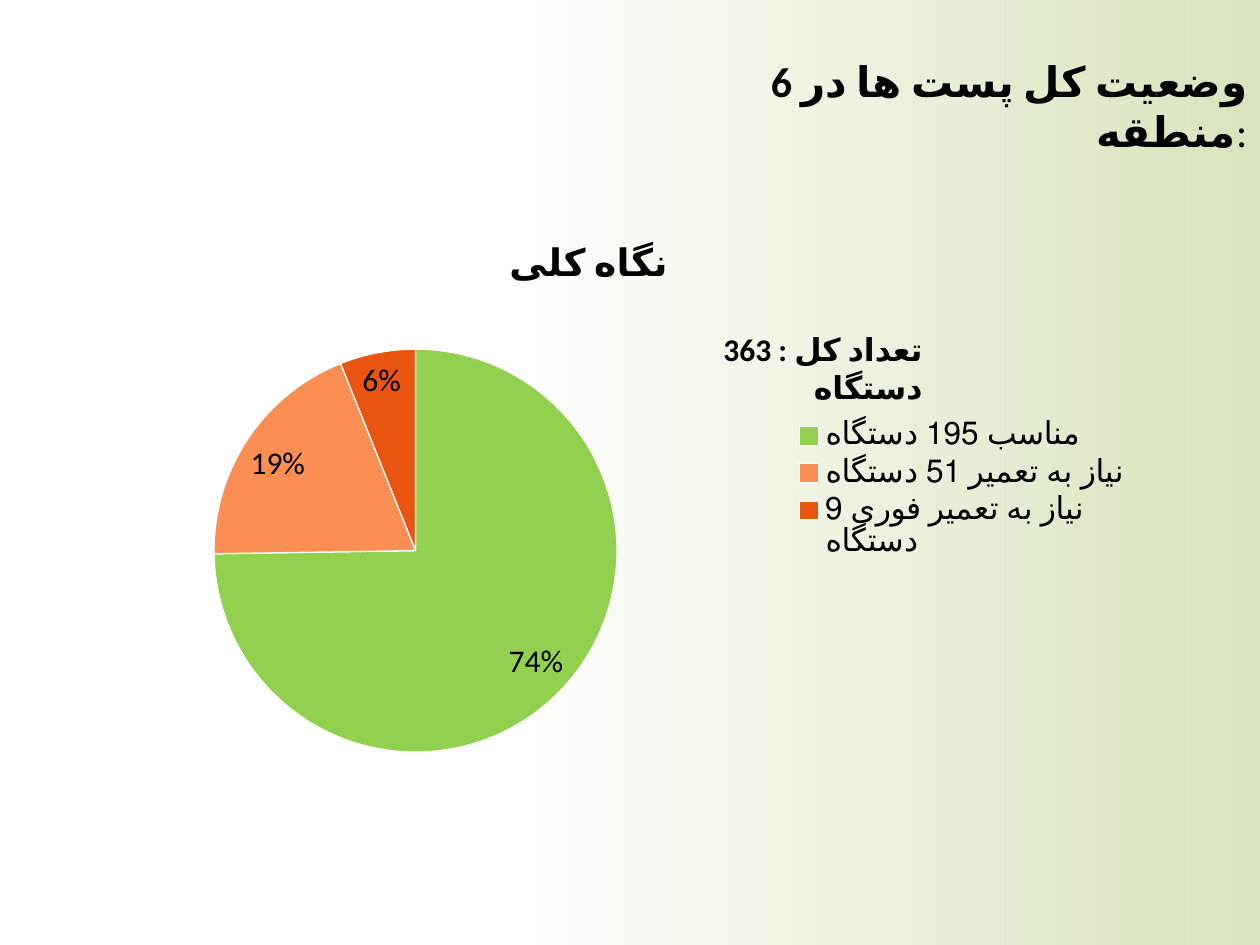
from typing import NamedTuple

from lxml.etree import SubElement
from pptx import Presentation
from pptx.chart.data import CategoryChartData
from pptx.dml.color import RGBColor
from pptx.enum.chart import XL_CHART_TYPE, XL_LABEL_POSITION, XL_LEGEND_POSITION
from pptx.enum.lang import MSO_LANGUAGE_ID
from pptx.enum.text import MSO_ANCHOR, PP_ALIGN
from pptx.oxml.ns import qn
from pptx.util import Emu, Pt

PIXELS_PER_INCH = 126
FONT = "Calibri"
BLACK = "000000"
WHITE = "FFFFFF"


class Box(NamedTuple):
    left: int
    top: int
    width: int
    height: int


class Slice(NamedTuple):
    label: str
    percent: int
    color: str


SLIDE = Box(0, 0, 1260, 945)
TITLE = Box(735, 53, 525, 105)
CHART = Box(42, 210, 1102, 559)
PIE = Box(214, 349, 403, 403)
LEGEND = Box(791, 414, 340, 150)
TOTAL = Box(630, 324, 305, 50)

SLICES = [
    Slice("مناسب 195 دستگاه", 74, "92D050"),
    Slice("نیاز به تعمیر 51 دستگاه", 19, "FB8F53"),
    Slice("نیاز به تعمیر فوری 9 دستگاه", 6, "E95411"),
]


def px(length: int) -> Emu:
    return Emu(round(length * 914400 / PIXELS_PER_INCH))


def rgb(color: str) -> RGBColor:
    return RGBColor.from_string(color)


def place(shape, box: Box) -> None:
    shape.left, shape.top, shape.width, shape.height = map(px, box)


def format_font(font, size: float = 18, bold: bool = False) -> None:
    font.name = FONT
    font.size = Pt(size)
    font.bold = bold
    font.color.rgb = rgb(BLACK)


def add_text(paragraph, text: str, *, size: float = 18, bold: bool = False,
             align: PP_ALIGN = PP_ALIGN.RIGHT) -> None:
    """Add a Persian run, with the font set for its complex script too."""
    paragraph.alignment = align
    run = paragraph.add_run()
    run.text = text
    format_font(run.font, size, bold)
    run.font.language_id = MSO_LANGUAGE_ID.FARSI
    properties = run.font._element
    SubElement(properties, qn("a:cs")).set("typeface", FONT)


def set_background(slide) -> None:
    fill = slide.background.fill
    fill.gradient()
    fill.gradient_angle = 0
    for stop, position, color in zip(fill.gradient_stops, (0.39, 1), (WHITE, "D7E4BD")):
        stop.position = position
        stop.color.rgb = rgb(color)


def set_layout(element, successors: tuple[str, ...], box: Box, inner: bool = False) -> None:
    """Fix the place of a chart part, as fractions of the chart."""
    for old in element.findall(qn("c:layout")):
        element.remove(old)
    layout = SubElement(element, qn("c:layout"))
    following = next((child for child in element
                      if child.tag in map(qn, successors)), None)
    if following is not None:
        following.addprevious(layout)
    manual = SubElement(layout, qn("c:manualLayout"))
    settings = [("layoutTarget", "inner")] if inner else []
    settings += [("xMode", "edge"), ("yMode", "edge"),
                 ("x", round((box.left - CHART.left) / CHART.width, 3)),
                 ("y", round((box.top - CHART.top) / CHART.height, 3)),
                 ("w", round(box.width / CHART.width, 3)),
                 ("h", round(box.height / CHART.height, 3))]
    for name, value in settings:
        SubElement(manual, qn(f"c:{name}")).set("val", str(value))


def add_pie(slide) -> None:
    data = CategoryChartData()
    data.categories = [part.label for part in SLICES]
    data.add_series("نگاه کلی ", [part.percent for part in SLICES])
    chart = slide.shapes.add_chart(XL_CHART_TYPE.PIE, *map(px, CHART), data).chart
    format_font(chart.font)

    chart.has_title = True
    add_text(chart.chart_title.text_frame.paragraphs[0], "نگاه کلی ",
             size=21.6, bold=True, align=PP_ALIGN.CENTER)
    chart.chart_title.include_in_layout = False

    chart.has_legend = True
    legend = chart.legend
    legend.position = XL_LEGEND_POSITION.RIGHT
    legend.include_in_layout = False
    format_font(legend.font)

    plot = chart.plots[0]
    plot.vary_by_categories = True
    plot.has_data_labels = True
    labels = plot.data_labels
    labels.show_percentage = False
    labels.show_value = True
    labels.number_format = '0"%"'
    labels.number_format_is_linked = False
    labels.position = XL_LABEL_POSITION.BEST_FIT
    format_font(labels.font)

    for index, part in enumerate(SLICES):
        point_format = plot.series[0].points[index].format
        point_format.fill.solid()
        point_format.fill.fore_color.rgb = rgb(part.color)
        point_format.line.color.rgb = rgb(WHITE)
        point_format.line.width = Pt(0.75)

    plot_area = chart.element.find(f".//{qn('c:plotArea')}")
    set_layout(plot_area, ("c:pieChart",), PIE, inner=True)
    legend_element = chart.element.find(f".//{qn('c:legend')}")
    set_layout(legend_element, ("c:overlay", "c:spPr", "c:txPr"), LEGEND)


def main() -> None:
    presentation = Presentation()
    presentation.slide_width = px(SLIDE.width)
    presentation.slide_height = px(SLIDE.height)
    slide = presentation.slides.add_slide(presentation.slide_layouts[5])
    set_background(slide)

    title = slide.shapes.title
    place(title, TITLE)
    title.text_frame.vertical_anchor = MSO_ANCHOR.MIDDLE
    heading = title.text_frame.paragraphs[0]
    add_text(heading, "وضعیت کل پست ها در 6 منطقه", size=24, bold=True)
    add_text(heading, ":", size=24)

    add_pie(slide)

    total = slide.shapes.add_textbox(*map(px, TOTAL))
    total.text_frame.word_wrap = True
    add_text(total.text_frame.paragraphs[0], "تعداد کل : 363 دستگاه", bold=True)

    presentation.save("out.pptx")


if __name__ == "__main__":
    main()
